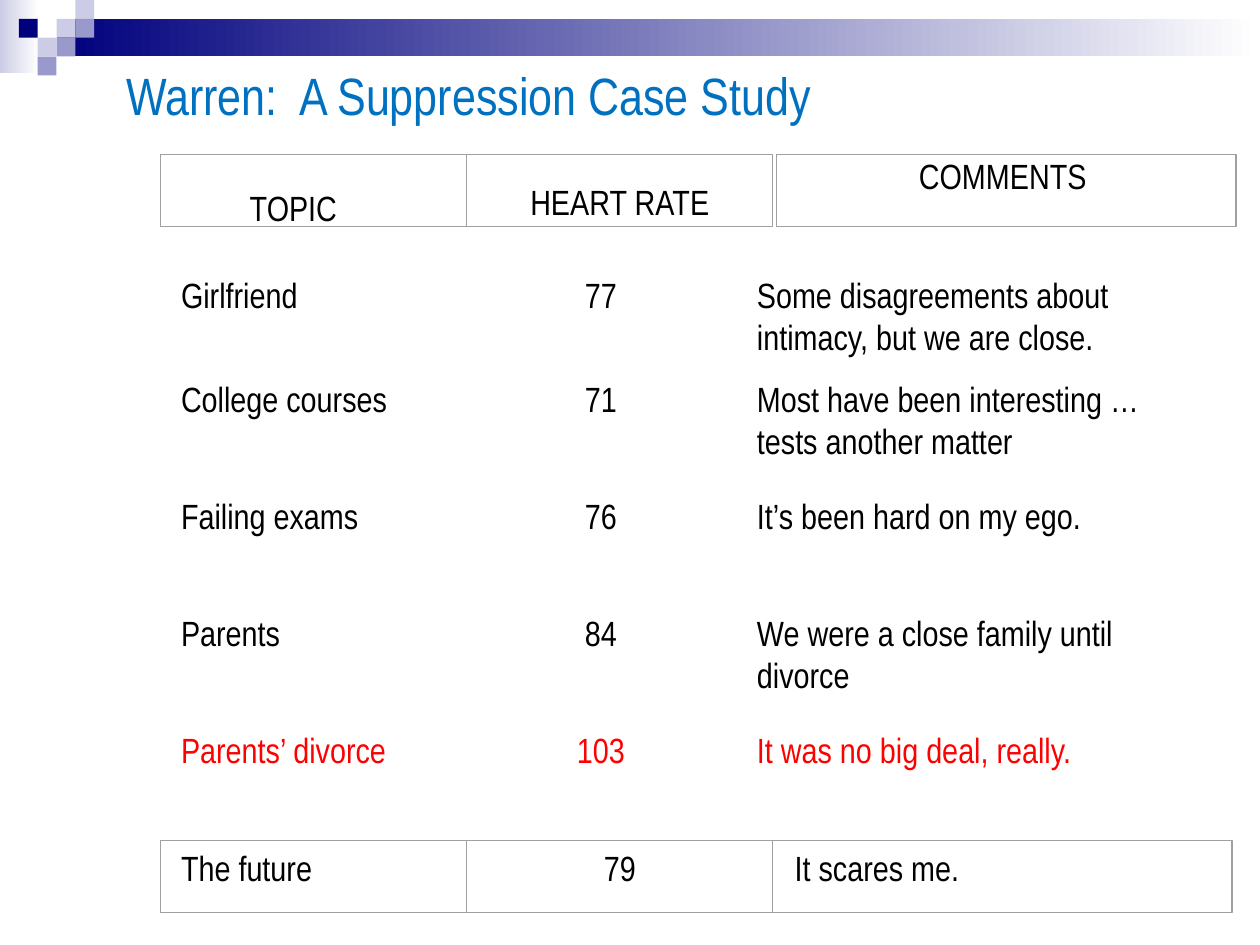
import pptx
import pptx.util
import pptx.dml.color
import pptx.enum.shapes
import pptx.enum.text

Cm, Pt = pptx.util.Cm, pptx.util.Pt
ALIGN = pptx.enum.text.PP_ALIGN
COLORS = {
    "navy": "00007D", "mid": "9999CC", "pale": "CCCCE6", "white": "FFFFFF",
    "border": "A0A0A0", "text": "000000", "alert": "FF0000", "title": "0070C0",
}


def rgb(name):
    return pptx.dml.color.RGBColor.from_string(COLORS[name])


def write(sp, text, box, size=20, color="text", align=ALIGN.LEFT, inset=True):
    sp.left, sp.top, sp.width, sp.height = [Cm(v) for v in box]
    tf = sp.text_frame
    tf.word_wrap = True
    tf.auto_size = pptx.enum.text.MSO_AUTO_SIZE.NONE
    tf.vertical_anchor = pptx.enum.text.MSO_ANCHOR.TOP
    if not inset:
        tf.margin_left = tf.margin_top = tf.margin_right = tf.margin_bottom = 0
    p = tf.paragraphs[0]
    p.alignment = align
    r = p.add_run()
    r.text = text
    r.font.name = "Arial Narrow"
    r.font.size = Pt(size)
    r.font.color.rgb = rgb(color)


def add_rect(s, box, fill=None, fade=None, line=None):
    sp = s.shapes.add_shape(pptx.enum.shapes.MSO_SHAPE.RECTANGLE, *[Cm(v) for v in box])
    sp.shadow.inherit = False
    if fade:
        sp.fill.gradient()
        sp.fill.gradient_angle = 0
        for stop, name in zip(sp.fill.gradient_stops, (fill, fade)):
            stop.color.rgb = rgb(name)
    elif fill:
        sp.fill.solid()
        sp.fill.fore_color.rgb = rgb(fill)
    else:
        sp.fill.background()
    if line:
        sp.line.color.rgb = rgb(line)
        sp.line.width = Pt(0)
    else:
        sp.line.fill.background()


prs = pptx.Presentation()
prs.slide_width, prs.slide_height = Cm(25.4), Cm(19.05)
s = prs.slides.add_slide(prs.slide_layouts[5])

# Top band and checker squares, placed by column and row
add_rect(s, (0, 0, 0.79, 1.47), "pale", fade="white")
add_rect(s, (1.14, 0.38, 24.26, 0.76), "navy", fade="white")
SQUARE = 0.38
for col, row, name in [(3, 1, "pale"), (4, 0, "pale"), (4, 1, "mid"), (2, 2, "pale"),
                       (1, 1, "navy"), (3, 2, "mid"), (2, 3, "mid")]:
    add_rect(s, (col * SQUARE, row * SQUARE, SQUARE, SQUARE), name)

# Title
write(s.shapes.title, "Warren:  A Suppression Case Study", (2.29, 1.14, 15.24, 1.55),
      size=30, color="title")

# Topic rows
columns = [(3.4, 5.79, ALIGN.LEFT), (9.22, 5.79, ALIGN.CENTER), (15.01, 8.89, ALIGN.LEFT)]
rows = [
    ("Girlfriend", "77", "Some disagreements about intimacy, but we are close."),
    ("College courses", "71", "Most have been interesting … tests another matter"),
    ("Failing exams", "76", "It’s been hard on my ego."),
    ("Parents", "84", "We were a close family until divorce"),
    ("Parents’ divorce", "103", "It was no big deal, really."),
]
ROW_H = 2.36
for i, row in enumerate(rows):
    top = 5.38 if i == 0 else 7.49 + (i - 1) * ROW_H
    height = 2.11 if i == 0 else ROW_H
    color = "alert" if row[0] == "Parents’ divorce" else "text"
    for text, (left, width, align) in zip(row, columns):
        write(s.shapes.add_textbox(0, 0, 0, 0), text, (left, top, width, height),
              color=color, align=align)

# Bordered header and closing row
HEAD_TOP, LAST_TOP, CELL_H = 3.12, 16.94, 1.45
for top, lefts in [(HEAD_TOP, (3.23, 9.4, 15.65)), (LAST_TOP, (3.23, 9.4, 15.57))]:
    for left, width in zip(lefts, (6.17, 6.17, 9.27)):
        add_rect(s, (left, top, width, CELL_H), line="border")

for text, left, top, width, align, inset in [
    ("TOPIC", 3.02, 3.63, 5.79, ALIGN.CENTER, True),
    ("HEART RATE", 9.6, 3.63, 5.79, ALIGN.CENTER, False),
    ("COMMENTS", 15.77, HEAD_TOP, 8.89, ALIGN.CENTER, False),
    ("The future", 3.4, LAST_TOP, 5.79, ALIGN.LEFT, True),
    ("79", 9.6, LAST_TOP, 5.79, ALIGN.CENTER, True),
    ("It scares me.", 15.77, LAST_TOP, 8.89, ALIGN.LEFT, True),
]:
    write(s.shapes.add_textbox(0, 0, 0, 0), text, (left, top, width, CELL_H),
          align=align, inset=inset)

prs.save("out.pptx")
